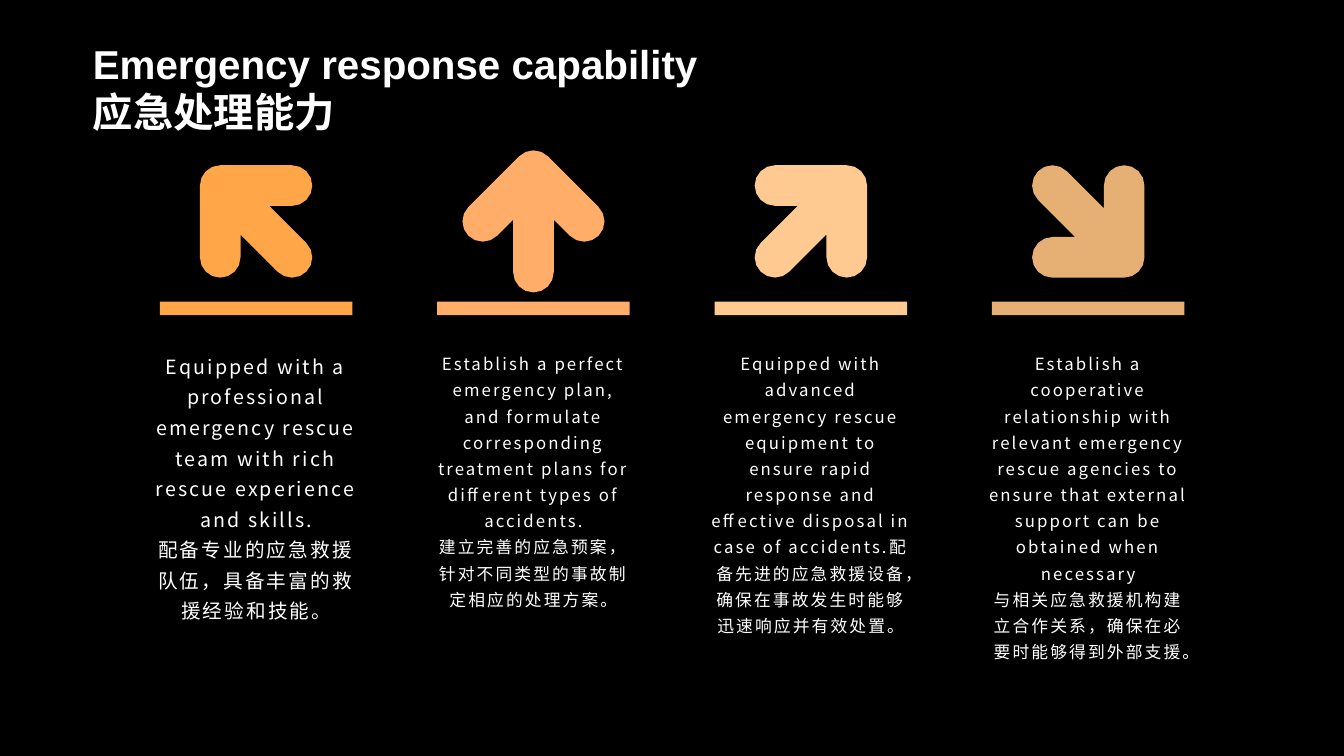
from dataclasses import dataclass
from math import cos, radians, sin, sqrt

from lxml.etree import SubElement
from pptx import Presentation
from pptx.dml.color import RGBColor
from pptx.enum.shapes import MSO_SHAPE
from pptx.enum.text import MSO_ANCHOR, PP_ALIGN
from pptx.oxml.ns import qn
from pptx.util import Cm, Pt


@dataclass(frozen=True)
class Theme:
    background: RGBColor = RGBColor.from_string("000000")
    text: RGBColor = RGBColor.from_string("FFFFFF")
    accents: tuple = ("FFA649", "FFAD69", "FFCA92", "E6B074")
    title_font: str = "Arial"
    body_font: str = "Noto Sans CJK SC"
    title_size: float = 28.8
    lead_size: int = 14
    body_size: int = 12
    tracking: int = 150


THEME = Theme()
TITLE = "Emergency response capability\v应急处理能力"

# Arrow rotation, text size, paragraphs
CAPABILITIES = [
    (-45, THEME.lead_size, [
        "Equipped with a professional emergency rescue team with rich rescue "
        "experience and skills.",
        "配备专业的应急救援队伍，具备丰富的救援经验和技能。"]),
    (0, THEME.body_size, [
        "Establish a perfect emergency plan, and formulate corresponding "
        "treatment plans for different types of accidents.",
        "建立完善的应急预案，针对不同类型的事故制定相应的处理方案。"]),
    (45, THEME.body_size, [
        "Equipped with advanced emergency rescue equipment to ensure rapid "
        "response and effective disposal in case of accidents."
        "配备先进的应急救援设备，确保在事故发生时能够迅速响应并有效处置。"]),
    (135, THEME.body_size, [
        "Establish a cooperative relationship with relevant emergency rescue "
        "agencies to ensure that external support can be obtained when necessary",
        "与相关应急救援机构建立合作关系，确保在必要时能够得到外部支援。"]),
]


def paint(sp, color):
    sp.fill.solid()
    sp.fill.fore_color.rgb = RGBColor.from_string(color)
    sp.line.fill.background()
    sp.shadow.inherit = False


def set_font(p, name, size):
    p.font.size = Pt(size)
    p.font.color.rgb = THEME.text
    p.font.name = name


def arc(cx, cy, radius, start, end, step=22.5):
    """Return points along an arc; angles are in degrees, clockwise from the right."""
    count = round((end - start) / step)
    angles = [radians(start + step * i) for i in range(count + 1)]
    return [(cx + radius * cos(a), cy + radius * sin(a)) for a in angles]


def add_arrow(slide, cx, cy, size, rotation, color):
    """Draw an up arrow with round ends inside a square, then turn it."""
    radius = size / 7
    reach = size / 2 - radius
    notch = radius * (1 + sqrt(2)) - reach
    points = [
        *arc(0, -reach, radius, -135, -45),
        *arc(reach, 0, radius, -45, 135),
        (radius, notch),
        *arc(0, reach, radius, 0, 180),
        (-radius, notch),
        *arc(-reach, 0, radius, 45, 225),
    ]
    outline = [(Cm(cx + x), Cm(cy + y)) for x, y in points]
    builder = slide.shapes.build_freeform(*outline[0])
    builder.add_line_segments(outline[1:], close=True)
    sp = builder.convert_to_shape()
    sp.rotation = rotation
    paint(sp, color)


def add_description(slide, left, top, width, height, paragraphs, size):
    tf = slide.shapes.add_textbox(Cm(left), Cm(top), Cm(width), Cm(height)).text_frame
    tf.word_wrap = True
    tf.text = "\n".join(paragraphs)
    for p in tf.paragraphs:
        p.alignment = PP_ALIGN.CENTER
        p.line_spacing = 1.3
        set_font(p, THEME.body_font, size)
        props = p._p.pPr.find(qn("a:defRPr"))
        props.set("spc", str(THEME.tracking))
        SubElement(props, qn("a:ea"), typeface=THEME.body_font)


def add_capability(slide, left, top, width, height, color, rotation, size, paragraphs):
    """Stack an arrow, a bar and a description, centred in the given box."""
    arrow_size, bar_width, bar_height = 3.58, 4.85, 0.34
    bar_top, text_top = top + 3.81, top + 4.85
    cx = left + width / 2
    add_arrow(slide, cx, top + arrow_size / 2, arrow_size, rotation, color)
    add_description(slide, left, text_top, width, top + height - text_top,
                    paragraphs, size)
    bar = slide.shapes.add_shape(MSO_SHAPE.RECTANGLE, Cm(cx - bar_width / 2),
                                 Cm(bar_top), Cm(bar_width), Cm(bar_height))
    paint(bar, color)


def add_title(slide, left, top, width, height):
    sp = slide.shapes.title
    sp.left, sp.top, sp.width, sp.height = Cm(left), Cm(top), Cm(width), Cm(height)
    tf = sp.text_frame
    tf.margin_left = tf.margin_top = tf.margin_right = tf.margin_bottom = 0
    tf.vertical_anchor = MSO_ANCHOR.MIDDLE
    tf.word_wrap = True
    p = tf.paragraphs[0]
    p.text = TITLE
    p.alignment = PP_ALIGN.LEFT
    p.line_spacing = 1.0
    set_font(p, THEME.title_font, THEME.title_size)
    p.font.bold = True


def add_capability_slide(prs):
    slide = prs.slides.add_slide(prs.slide_layouts[5])
    slide.background.fill.solid()
    slide.background.fill.fore_color.rgb = THEME.background
    add_title(slide, 2.34, 1, 29.2, 2.39)
    first_left, pitch = 3.66, 6.99
    for i, (color, capability) in enumerate(zip(THEME.accents, CAPABILITIES)):
        add_capability(slide, first_left + i * pitch, 3.79, 5.59, 13.36,
                       color, *capability)


def main():
    prs = Presentation()
    prs.slide_width, prs.slide_height = Cm(33.87), Cm(19.05)
    add_capability_slide(prs)
    prs.save("out.pptx")


if __name__ == "__main__":
    main()
